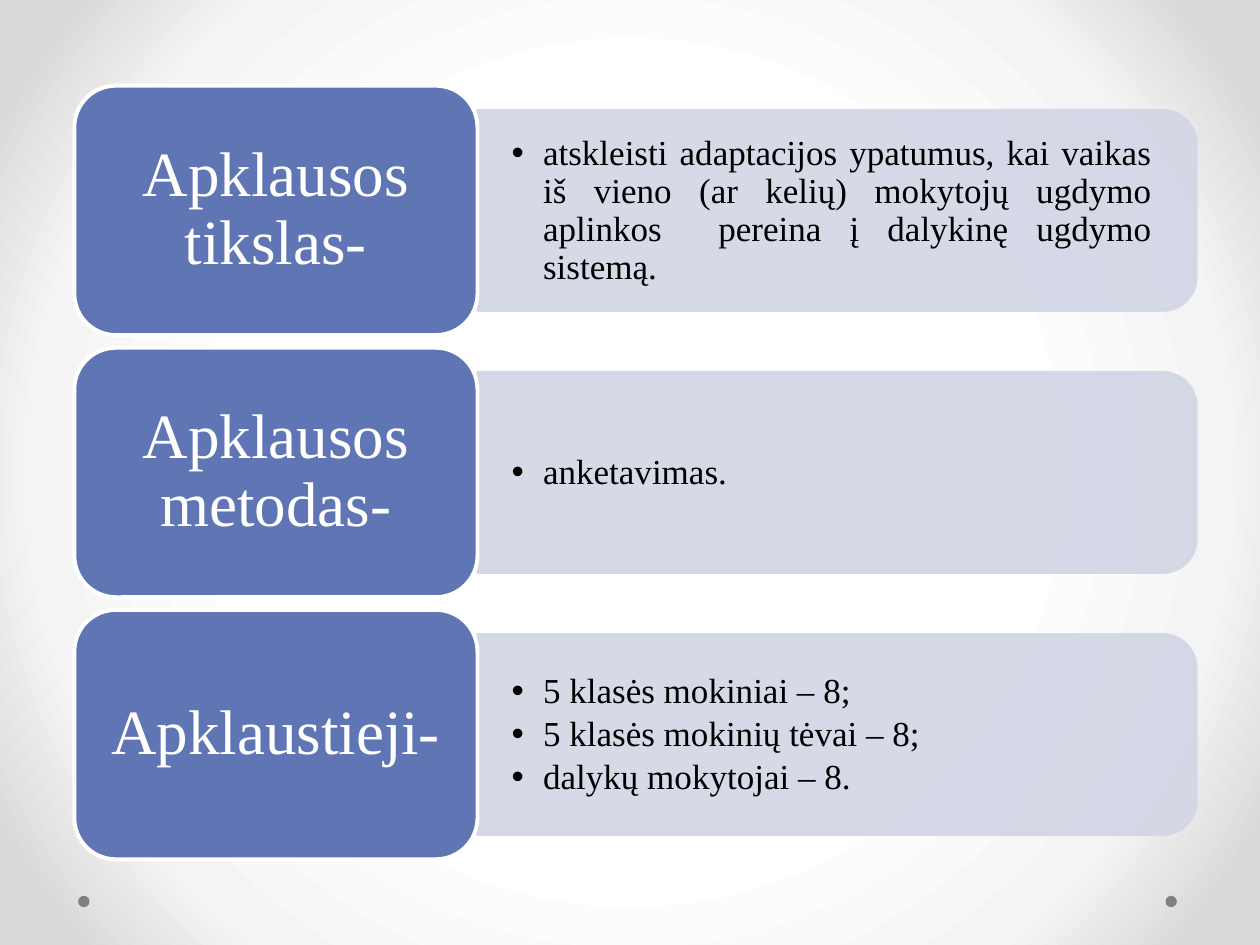
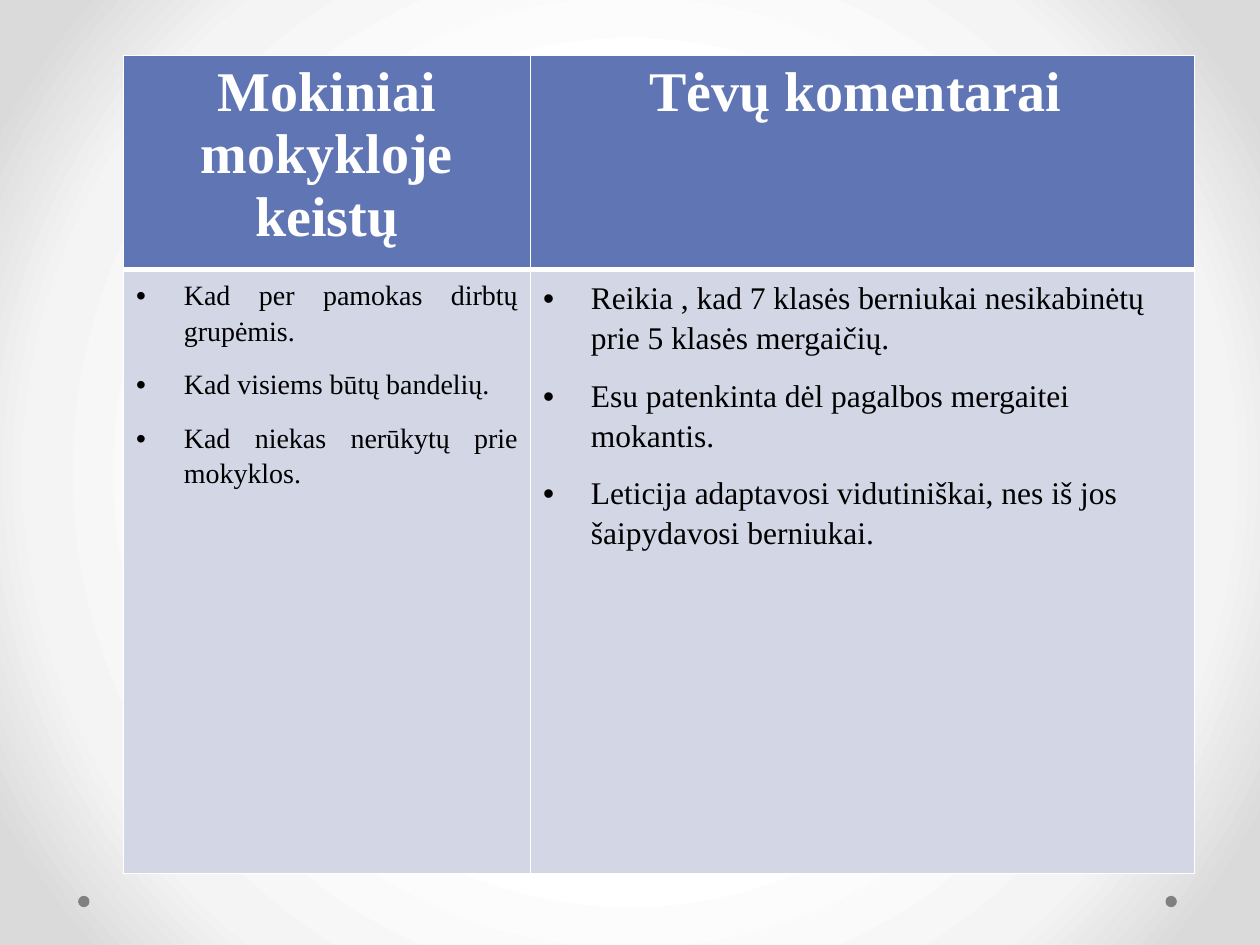
from lxml import etree
from pptx import Presentation, oxml
from pptx import util as u
from pptx.dml.color import RGBColor
from pptx.enum import shapes, text
from pptx.oxml import ns

BLUE, PALE, WHITE, BLACK, GREY = "6076B4", "D2D6E5", "FFFFFF", "000000", "808080"
FONT = "Times New Roman"
CENTER, LEFT, JUSTIFY = text.PP_ALIGN.CENTER, text.PP_ALIGN.LEFT, text.PP_ALIGN.JUSTIFY
GLOW = ((50, "FFFFFF"), (76, "F4F4F4"), (92, "DADADA"))


def paint(fill, colour):
    fill.solid()
    fill.fore_color.rgb = RGBColor.from_string(colour)


def write(frame, lines, colour, font, layout, hang=0):
    for number, line in enumerate(lines):
        para = frame.add_paragraph() if number else frame.paragraphs[0]
        for name, value in layout.items():
            setattr(para, name, value)
        span = para.add_run()
        span.text = line
        for name, value in {"name": FONT, **font}.items():
            setattr(span.font, name, value)
        paint(span.font.fill, colour)
        if hang:
            props = para._p.get_or_add_pPr()
            props.set("marL", str(u.Inches(hang)))
            props.set("indent", str(-u.Inches(hang)))
            etree.SubElement(props, ns.qn("a:buFont"), typeface="Arial")
            etree.SubElement(props, ns.qn("a:buChar"), char="•")


deck = Presentation()
deck.slide_width, deck.slide_height = u.Inches(10), u.Inches(7.5)

stops = "".join(
    f'<a:gs pos="{place * 1000}"><a:srgbClr val="{colour}"/></a:gs>' for place, colour in GLOW
)
backdrop = (
    f'<p:bg {ns.nsdecls("p", "a")}><p:bgPr><a:gradFill rotWithShape="1"><a:gsLst>{stops}</a:gsLst>'
    '<a:path path="circle"><a:fillToRect l="50000" t="50000" r="50000" b="50000"/></a:path>'
    "</a:gradFill><a:effectLst/></p:bgPr></p:bg>"
)
pages = []
for _ in range(2):
    page = deck.slides.add_slide(deck.slide_layouts[6])
    page.element.cSld.insert(0, oxml.parse_xml(backdrop))
    for left in (9.25, 0.62):
        dot = page.shapes.add_shape(
            shapes.MSO_SHAPE.OVAL, u.Inches(left), u.Inches(7.11), u.Inches(0.09), u.Inches(0.09)
        )
        dot.shadow.inherit = False
        paint(dot.fill, GREY)
        dot.line.fill.background()
    pages.append(page)
survey_page, comments_page = pages

survey = (
    ("Apklausos tikslas-", JUSTIFY, [
        "atskleisti adaptacijos ypatumus, kai vaikas iš vieno (ar kelių) mokytojų "
        "ugdymo aplinkos  pereina į dalykinę ugdymo sistemą.",
    ]),
    ("Apklausos metodas-", LEFT, ["anketavimas."]),
    ("Apklaustieji-", LEFT, [
        "5 klasės mokiniai – 8;",
        "5 klasės mokinių tėvai – 8;",
        "dalykų mokytojai – 8.",
    ]),
)
for row, (label, alignment, details) in enumerate(survey):
    top = 0.68 + 2.08 * row
    panel = survey_page.shapes.add_shape(
        shapes.MSO_SHAPE.ROUND_2_SAME_RECTANGLE,
        u.Inches(5.85), u.Inches(top - 1.86), u.Inches(1.58), u.Inches(5.7),
    )
    panel.rotation = 90
    details_box = survey_page.shapes.add_textbox(
        u.Inches(3.79), u.Inches(top + 0.28), u.Inches(5.62), u.Inches(1.43)
    )
    label_box = survey_page.shapes.add_shape(
        shapes.MSO_SHAPE.ROUNDED_RECTANGLE,
        u.Inches(0.59), u.Inches(top), u.Inches(3.2), u.Inches(1.98),
    )
    for box, fill, line in ((panel, PALE, PALE), (label_box, BLUE, WHITE)):
        box.shadow.inherit = False
        paint(box.fill, fill)
        paint(box.line.fill, line)
        box.line.width = u.Pt(2.25)
    for colour in panel.element.spPr.iter(ns.qn("a:srgbClr")):
        etree.SubElement(colour, ns.qn("a:alpha"), val="90000")
    for box, side, edge in ((details_box, 0.27, 0.14), (label_box, 0.15, 0.07)):
        frame_format = {
            "word_wrap": True,
            "vertical_anchor": text.MSO_ANCHOR.MIDDLE,
            "margin_left": u.Inches(side),
            "margin_right": u.Inches(side),
            "margin_top": u.Inches(edge),
            "margin_bottom": u.Inches(edge),
        }
        for name, value in frame_format.items():
            setattr(box.text_frame, name, value)
    write(details_box.text_frame, details, BLACK, {"size": u.Pt(20)},
          {"alignment": alignment, "line_spacing": 0.9, "space_after": u.Pt(3)}, 0.25)
    write(label_box.text_frame, [label], WHITE, {"size": u.Pt(36)},
          {"alignment": CENTER, "line_spacing": 0.9})

comments = (
    (3.23, "Mokiniai mokykloje keistų", 16, JUSTIFY, [
        "Kad per pamokas dirbtų grupėmis.",
        "Kad visiems būtų bandelių.",
        "Kad niekas nerūkytų prie mokyklos.",
    ]),
    (5.27, "Tėvų komentarai ", 18, LEFT, [
        "Reikia , kad 7 klasės berniukai nesikabinėtų prie 5 klasės mergaičių.",
        "Esu patenkinta dėl pagalbos mergaitei mokantis.",
        "Leticija adaptavosi vidutiniškai, nes iš jos šaipydavosi berniukai.",
    ]),
)
table = comments_page.shapes.add_table(
    2, 2, u.Inches(0.98), u.Inches(0.44), u.Inches(8.5), u.Inches(6.3)
).table
table.horz_banding = False
for row, height in zip(table.rows, (1.51, 4.79)):
    row.height = u.Inches(height)
for column, (width, heading, size, alignment, remarks) in enumerate(comments):
    table.columns[column].width = u.Inches(width)
    head, body = table.cell(0, column), table.cell(1, column)
    for cell, fill, thick_side in ((head, BLUE, "B"), (body, PALE, "T")):
        for side in "LRTB":
            weight = u.Pt(3 if side == thick_side else 1)
            cell._tc.get_or_add_tcPr().append(oxml.parse_xml(
                f'<a:ln{side} {ns.nsdecls("a")} w="{weight}"><a:solidFill>'
                f'<a:srgbClr val="{WHITE}"/></a:solidFill></a:ln{side}>'
            ))
        paint(cell.fill, fill)
    write(head.text_frame, [heading], WHITE, {"size": u.Pt(32), "bold": True},
          {"alignment": CENTER})
    write(body.text_frame, remarks, BLACK, {"size": u.Pt(size), "bold": False},
          {"alignment": alignment, "line_spacing": 1.15, "space_after": u.Pt(10)}, 0.38)

deck.save("out.pptx")
